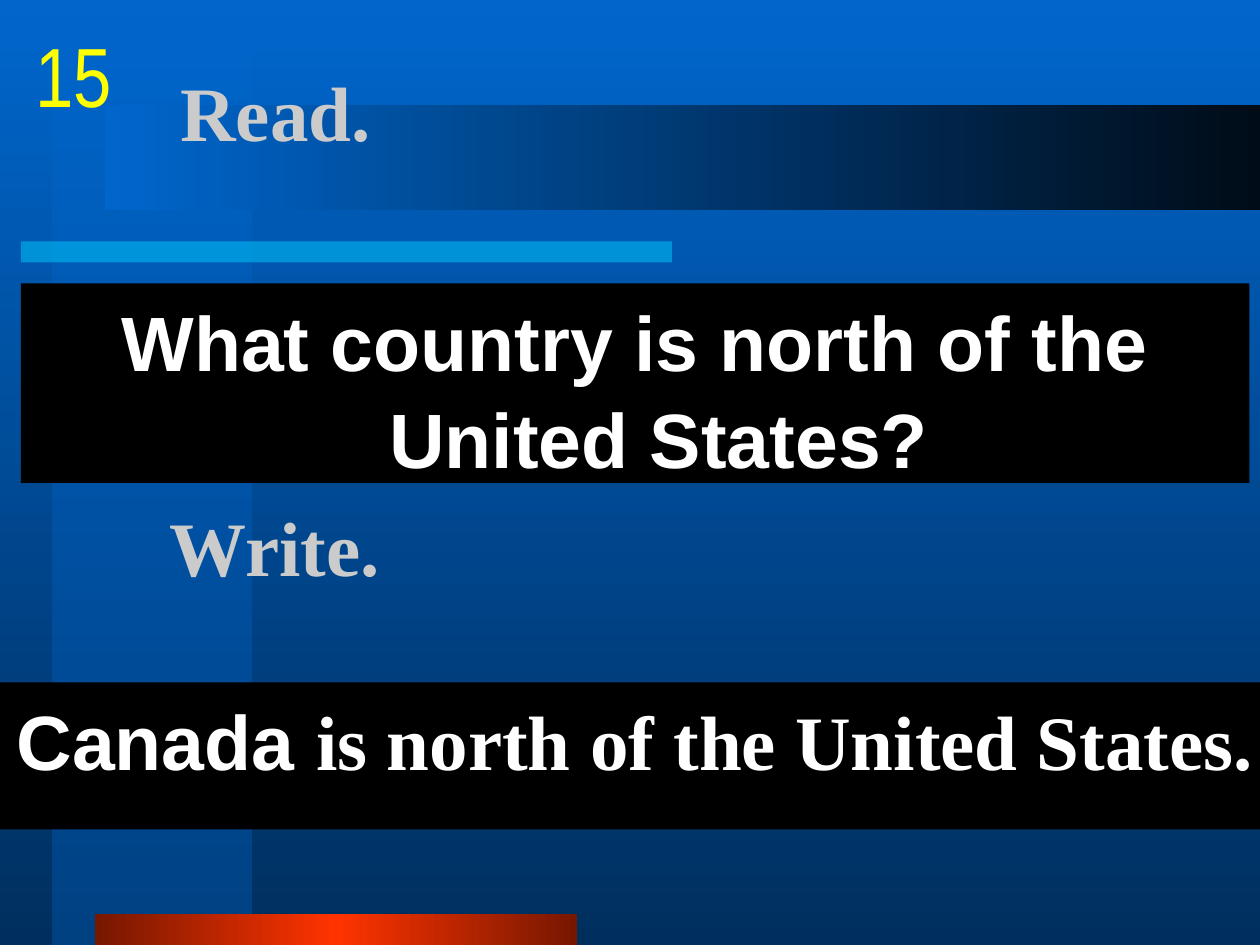
"""Build the reading and writing slide for question 15."""
from copy import deepcopy

from lxml import etree
from pptx import Presentation
from pptx import util as u
from pptx.dml.color import RGBColor
from pptx.enum import shapes, text
from pptx.oxml import ns

Pt = u.Pt


def paint(fill, colors, angle=0, alpha=None):
    """Fill with one colour or an even gradient, optionally see-through."""
    if len(colors) == 1:
        fill.solid()
        targets = [fill.fore_color]
    else:
        fill.gradient()
        fill.gradient_angle = angle
        first = fill.gradient_stops[0]
        stop_list = first._gs.getparent()
        for _ in colors[2:]:
            stop_list.append(deepcopy(first._gs))
        targets = []
        for i, stop in enumerate(fill.gradient_stops):
            stop.position = i / (len(colors) - 1)
            targets.append(stop.color)
    for target, color in zip(targets, colors):
        target.rgb = RGBColor.from_string(color)
        if alpha:
            rgb = target._color._xClr
            etree.SubElement(rgb, ns.qn("a:alpha")).set("val", str(alpha * 1000))


def write(box, pieces, size, color, bold=True):
    """Put (wording, font) pieces into the first paragraph and return it."""
    line = box.text_frame.paragraphs[0]
    for wording, font in pieces:
        run = line.add_run()
        run.text = wording
        run.font.name, run.font.size, run.font.bold = font, Pt(size), bold
        paint(run.font.fill, [color])
    return line


prs = Presentation()
prs.slide_width, prs.slide_height = Pt(720), Pt(540)
slide = prs.slides.add_slide(prs.slide_layouts[6])
paint(slide.background.fill, ["0066CC", "002F5E"], 270)

decorations = [
    ((30, 0, 114, 540), ["0066CC", "0053A6"], 270, 50),
    ((12, 138, 372, 12), ["00CCFF"], 0, 50),
    ((54, 522, 276, 18), ["761700", "FF3300", "761700"], 0, None),
    ((60, 60, 660, 60), ["0066CC", "000C18"], 0, None),
]
for place, colors, angle, alpha in decorations:
    bar = slide.shapes.add_shape(shapes.MSO_SHAPE.RECTANGLE, *map(Pt, place))
    bar.shadow.inherit = False
    bar.line.fill.background()
    paint(bar.fill, colors, angle, alpha)

for wording, place in [("Read.", (96, 18, 612, 90)), ("Write.", (90, 252, 612, 120))]:
    heading = slide.shapes.add_textbox(*map(Pt, place))
    heading.text_frame.word_wrap = True
    heading.text_frame.vertical_anchor = text.MSO_ANCHOR.MIDDLE
    write(heading, [(wording, "Times New Roman")], 44, "CBCBCB")

question = [("What country is north of the United States?", "Arial")]
answer = [("Canada ", "Arial"), ("is north of the United States.", "Times New Roman")]
for pieces, place in [(question, (12, 162, 702, 114)), (answer, (-6, 390, 738, 84))]:
    panel = slide.shapes.add_textbox(*map(Pt, place))
    panel.text_frame.word_wrap = True
    paint(panel.fill, ["000000"])
    sentence = write(panel, pieces, 44, "FFFFFF")
    sentence.alignment = text.PP_ALIGN.CENTER
    sentence.line_spacing = 1.05
    sentence.space_before = Pt(2)
    indents = sentence._p.get_or_add_pPr()
    indents.set("marL", str(Pt(27)))
    indents.set("indent", str(Pt(-27)))

number = slide.shapes.add_textbox(Pt(12), Pt(12), Pt(60), Pt(60))
number.text_frame.word_wrap = False
number.text_frame.vertical_anchor = text.MSO_ANCHOR.MIDDLE
write(number, [("15", "Arial Narrow")], 48, "FFFF00", False).alignment = text.PP_ALIGN.CENTER

prs.save("out.pptx")
